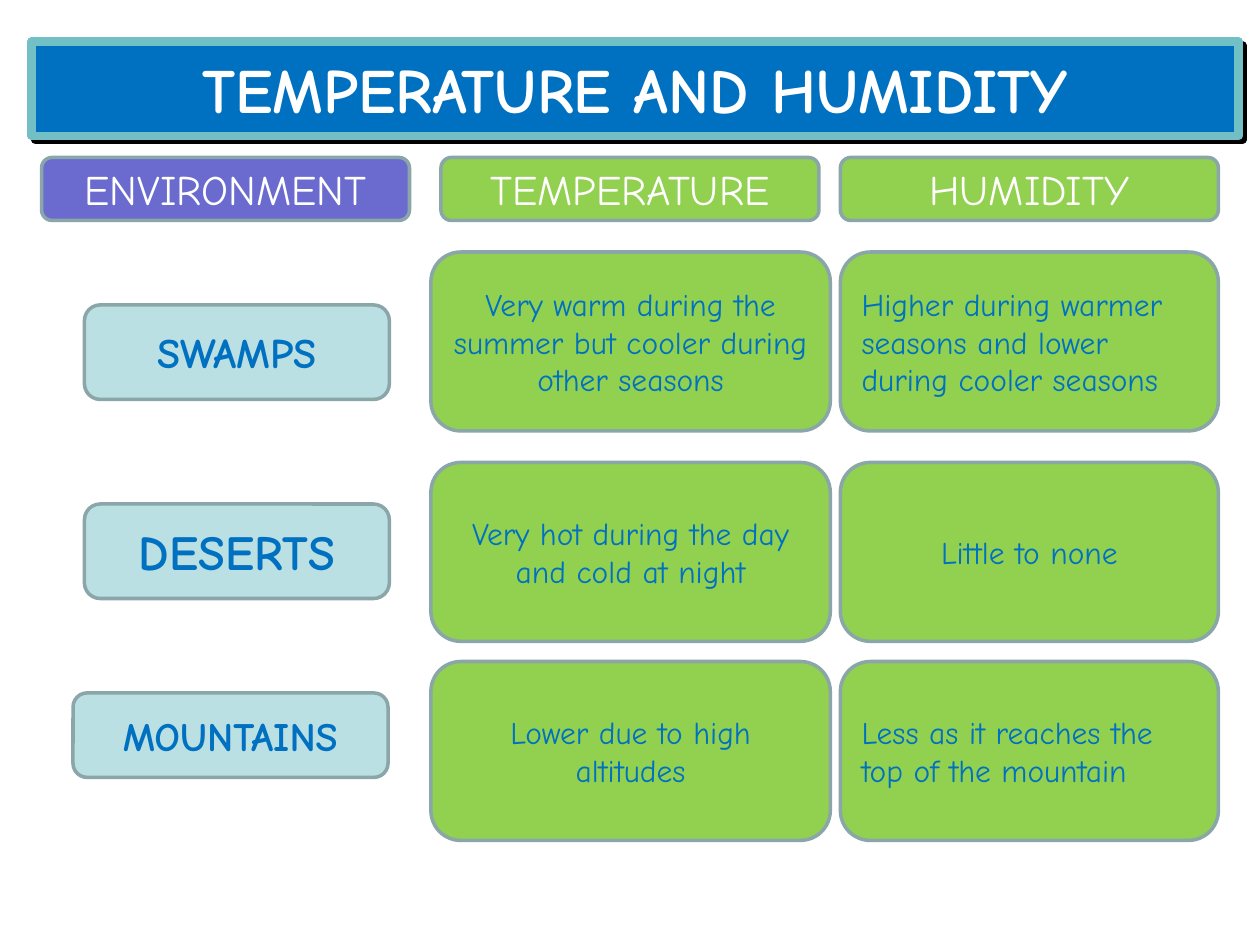
from lxml import etree
from pptx import Presentation
from pptx.dml.color import RGBColor
from pptx.enum.shapes import MSO_SHAPE
from pptx.enum.text import MSO_ANCHOR, PP_ALIGN
from pptx.util import Inches, Pt

BLUE, GREEN, PURPLE, PALE, WHITE = "0070C0", "92D050", "6B6BCF", "BBE0E3", "FFFFFF"


def rgb(color):
    return RGBColor.from_string(color)


def style(sp, text, fill, line, width, size, color, bold=False, align=PP_ALIGN.CENTER):
    sp.fill.solid()
    sp.fill.fore_color.rgb = rgb(fill)
    sp.line.color.rgb = rgb(line)
    sp.line.width = Pt(width)
    tf = sp.text_frame
    tf.word_wrap = True
    tf.vertical_anchor = MSO_ANCHOR.MIDDLE
    tf.text = text
    p = tf.paragraphs[0]
    p.alignment = align
    font = p.runs[0].font
    font.name, font.size, font.bold = "Comic Neue", Pt(size), bold
    font.color.rgb = rgb(color)


prs = Presentation()
prs.slide_width, prs.slide_height = Inches(10), Inches(7.5)
s = prs.slides.add_slide(prs.slide_layouts[5])

# Title bar with a hard shadow
title = s.shapes.title
title.left, title.top = Inches(0.25), Inches(0.33)
title.width, title.height = Inches(9.58), Inches(0.75)
style(title, "TEMPERATURE AND HUMIDITY", BLUE, "72BFC5", 4.75, 36, WHITE, True)
title._element.spPr.append(etree.fromstring(
    '<a:effectLst xmlns:a="http://schemas.openxmlformats.org/drawingml/2006/main">'
    '<a:outerShdw dist="40000" dir="2700000" algn="ctr" rotWithShape="0">'
    '<a:srgbClr val="000000"/></a:outerShdw></a:effectLst>'))

# Column headers: left, width, text, fill
boxes = []
for left, width, text, fill in [
    (0.33, 2.92, "ENVIRONMENT", PURPLE),
    (3.5, 3, "TEMPERATURE", GREEN),
    (6.67, 3, "HUMIDITY", GREEN),
]:
    boxes.append((left, 1.25, width, 0.5, text, fill, 24, WHITE, False, PP_ALIGN.CENTER))

# Environment labels: left, top, width, height, text, size
for left, top, width, height, text, size in [
    (0.67, 2.42, 2.42, 0.75, "SWAMPS", 24),
    (0.67, 4, 2.42, 0.75, "DESERTS", 28),
    (0.58, 5.5, 2.5, 0.67, "MOUNTAINS", 23),
]:
    boxes.append((left, top, width, height, text, PALE, size, BLUE, True, PP_ALIGN.CENTER))

# Facts: top, temperature, humidity, alignment of humidity
for top, temperature, humidity, align in [
    (2, "Very warm during the summer but cooler during other seasons",
     "Higher during warmer seasons and lower during cooler seasons", PP_ALIGN.LEFT),
    (3.67, "Very hot during the day and cold at night", "Little to none", PP_ALIGN.CENTER),
    (5.25, "Lower due to high altitudes",
     "Less as it reaches the top of the mountain", PP_ALIGN.LEFT),
]:
    boxes.append((3.42, top, 3.17, 1.42, temperature, GREEN, 18, BLUE, False, PP_ALIGN.CENTER))
    boxes.append((6.67, top, 3, 1.42, humidity, GREEN, 18, BLUE, False, align))

# Draw the rounded boxes
for left, top, width, height, text, fill, size, color, bold, align in boxes:
    sp = s.shapes.add_shape(MSO_SHAPE.ROUNDED_RECTANGLE, Inches(left), Inches(top),
                            Inches(width), Inches(height))
    sp.shadow.inherit = False
    style(sp, text, fill, "8AA6A8", 2, size, color, bold, align)

prs.save("out.pptx")
